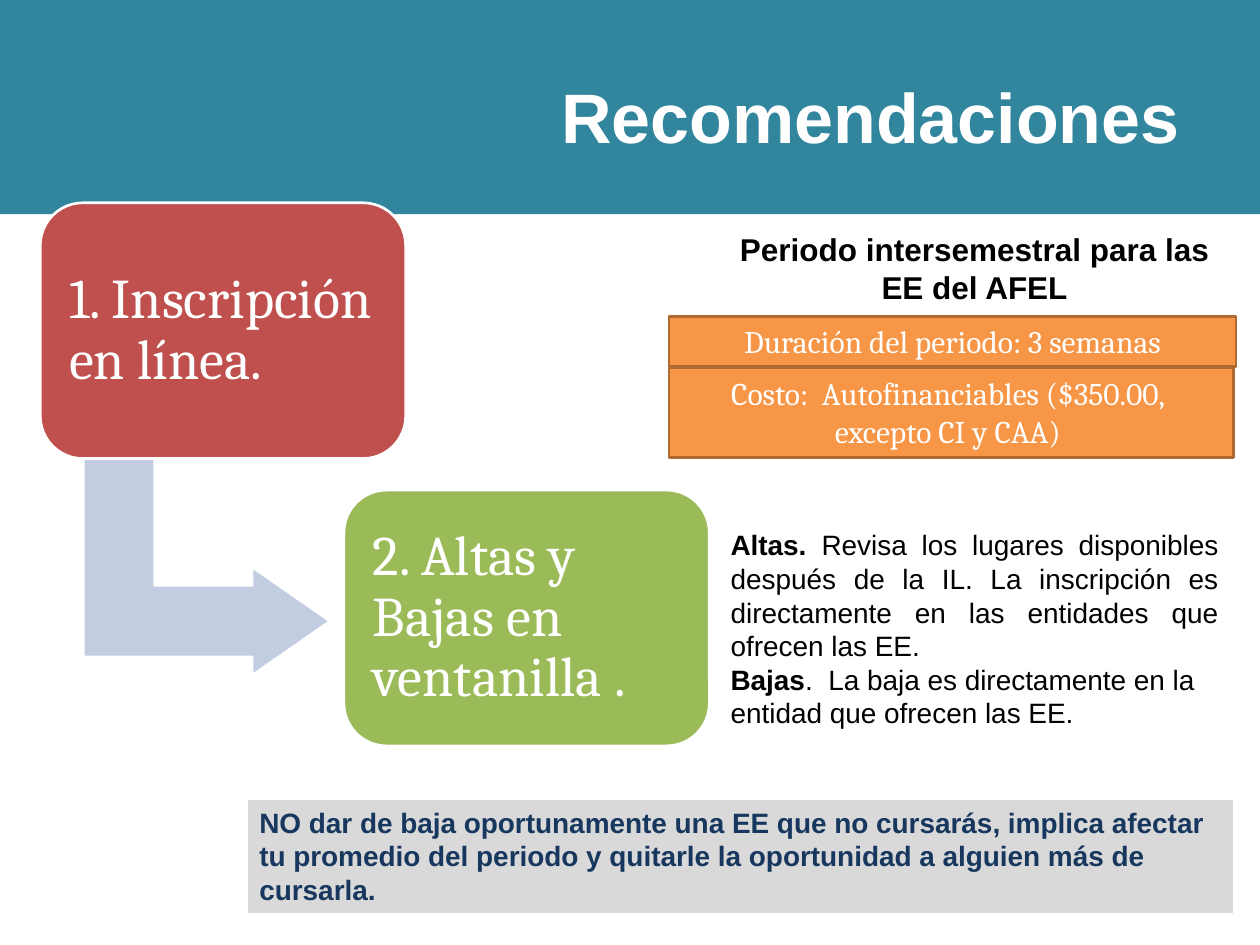
from dataclasses import dataclass

from pptx import Presentation
from pptx.dml.color import RGBColor
from pptx.enum.shapes import MSO_SHAPE as Shape
from pptx.enum.text import MSO_ANCHOR as Anchor, PP_ALIGN as Align
from pptx.util import Inches, Pt


@dataclass(frozen=True)
class Theme:
    sans: str = "Arial"
    serif: str = "Cambria"
    white: str = "FFFFFF"
    black: str = "000000"
    navy: str = "17375E"
    teal: str = "31859C"
    red: str = "C0504D"
    green: str = "9BBB59"
    arrow: str = "C2CDE1"
    orange: str = "F79646"
    brown: str = "AF6A32"
    grey: str = "D9D9D9"
    title_size: int = 40
    step_size: int = 32
    fact_size: int = 18
    body_size: int = 16


THEME = Theme()


@dataclass(frozen=True)
class Area:
    left: float
    top: float
    width: float
    height: float

    def lengths(self):
        return [Inches(n) for n in (self.left, self.top, self.width, self.height)]


@dataclass(frozen=True)
class Style:
    font: str
    size: int
    color: str
    align: Align = Align.LEFT


@dataclass(frozen=True)
class Step:
    text: str
    area: Area
    fill: str


@dataclass(frozen=True)
class Fact:
    lines: tuple[str, ...]
    area: Area


def add_span(para, text: str, style: Style, bold: bool = False) -> None:
    span = para.add_run()
    span.text = text
    span.font.name = style.font
    span.font.size = Pt(style.size)
    span.font.bold = bold
    span.font.color.rgb = RGBColor.from_string(style.color)


def write(box, lines, style: Style, bold: bool = False, anchor=Anchor.TOP) -> None:
    """Write one paragraph for each line of text."""
    frame = box.text_frame
    frame.word_wrap = True
    frame.vertical_anchor = anchor
    for index, line in enumerate(lines):
        para = frame.add_paragraph() if index else frame.paragraphs[0]
        para.alignment = style.align
        add_span(para, line, style, bold)


def draw_shape(page, kind: Shape, area: Area, fill: str,
               line: str | None = None, weight: float = 1.5):
    shape = page.shapes.add_shape(kind, *area.lengths())
    shape.shadow.inherit = False
    shape.fill.solid()
    shape.fill.fore_color.rgb = RGBColor.from_string(fill)
    if line is None:
        shape.line.fill.background()
    else:
        shape.line.color.rgb = RGBColor.from_string(line)
        shape.line.width = Pt(weight)
    return shape


def draw_step(page, step: Step) -> None:
    card = draw_shape(page, Shape.ROUNDED_RECTANGLE, step.area, step.fill, THEME.white)
    frame = card.text_frame
    frame.margin_left = frame.margin_right = Inches(0.13)
    frame.margin_top = frame.margin_bottom = Inches(0.13)
    write(card, [step.text], Style(THEME.serif, THEME.step_size, THEME.white),
          anchor=Anchor.MIDDLE)
    frame.paragraphs[0].line_spacing = 0.9


def draw_fact(page, fact: Fact) -> None:
    bar = draw_shape(page, Shape.RECTANGLE, fact.area, THEME.orange, THEME.brown)
    write(bar, fact.lines,
          Style(THEME.serif, THEME.fact_size, THEME.white, Align.CENTER))


def draw_title(page) -> None:
    draw_shape(page, Shape.RECTANGLE, Area(0, 0, 10, 1.7), THEME.teal)
    title = page.shapes.title
    title.left, title.top, title.width, title.height = Area(0.46, 0.29, 9, 1.25).lengths()
    write(title, ["Recomendaciones"],
          Style(THEME.sans, THEME.title_size, THEME.white, Align.RIGHT),
          bold=True, anchor=Anchor.MIDDLE)
    # Bring the title in front of the band
    page.shapes._spTree.append(title._element)


def draw_process(page) -> None:
    arrow = draw_shape(page, Shape.BENT_UP_ARROW, Area(0.78, 3.52, 1.72, 1.96),
                       THEME.arrow, THEME.white)
    arrow.rotation = 90
    for index, value in enumerate((0.33, 0.25, 0.36)):
        arrow.adjustments[index] = value
    steps = (
        Step("1. Inscripción en línea.", Area(0.32, 1.61, 2.9, 2.03), THEME.red),
        Step("2. Altas y Bajas en ventanilla .", Area(2.73, 3.89, 2.9, 2.03), THEME.green),
    )
    for step in steps:
        draw_step(page, step)


def draw_changes(page) -> None:
    box = page.shapes.add_textbox(*Area(5.7, 4.14, 4.07, 1.72).lengths())
    frame = box.text_frame
    frame.word_wrap = True
    style = Style(THEME.sans, THEME.body_size, THEME.black)
    entries = (
        ("Altas. ", "Revisa los lugares disponibles después de la IL. La inscripción "
         "es directamente en las entidades que ofrecen las EE.", Align.JUSTIFY),
        ("Bajas", ".  La baja es directamente en la entidad que ofrecen las EE.",
         Align.LEFT),
    )
    for index, (label, text, align) in enumerate(entries):
        para = frame.add_paragraph() if index else frame.paragraphs[0]
        para.alignment = align
        add_span(para, label, style, bold=True)
        add_span(para, text, style)


def draw_period(page) -> None:
    heading = page.shapes.add_textbox(*Area(5.7, 1.78, 4.07, 0.71).lengths())
    write(heading, ["Periodo intersemestral para las EE del AFEL"],
          Style(THEME.sans, THEME.fact_size, THEME.black, Align.CENTER), bold=True)
    facts = (
        Fact(("Duración del periodo: 3 semanas",), Area(5.31, 2.51, 4.5, 0.4)),
        Fact(("Costo:  Autofinanciables ($350.00, ", "excepto CI y CAA) "),
             Area(5.31, 2.92, 4.48, 0.71)),
    )
    for fact in facts:
        draw_fact(page, fact)


def draw_warning(page) -> None:
    note = draw_shape(page, Shape.RECTANGLE, Area(1.96, 6.34, 7.83, 0.91),
                      THEME.grey, THEME.white, 0.75)
    write(note, ["NO dar de baja oportunamente una EE que no cursarás, implica afectar "
                 "tu promedio del periodo y quitarle la oportunidad a alguien más de "
                 "cursarla."],
          Style(THEME.sans, THEME.body_size, THEME.navy), bold=True)


def main() -> None:
    deck = Presentation()
    deck.slide_width, deck.slide_height = Inches(10), Inches(7.5)
    page = deck.slides.add_slide(deck.slide_layouts[5])
    draw_title(page)
    draw_process(page)
    draw_changes(page)
    draw_period(page)
    draw_warning(page)
    deck.save("out.pptx")


if __name__ == "__main__":
    main()
